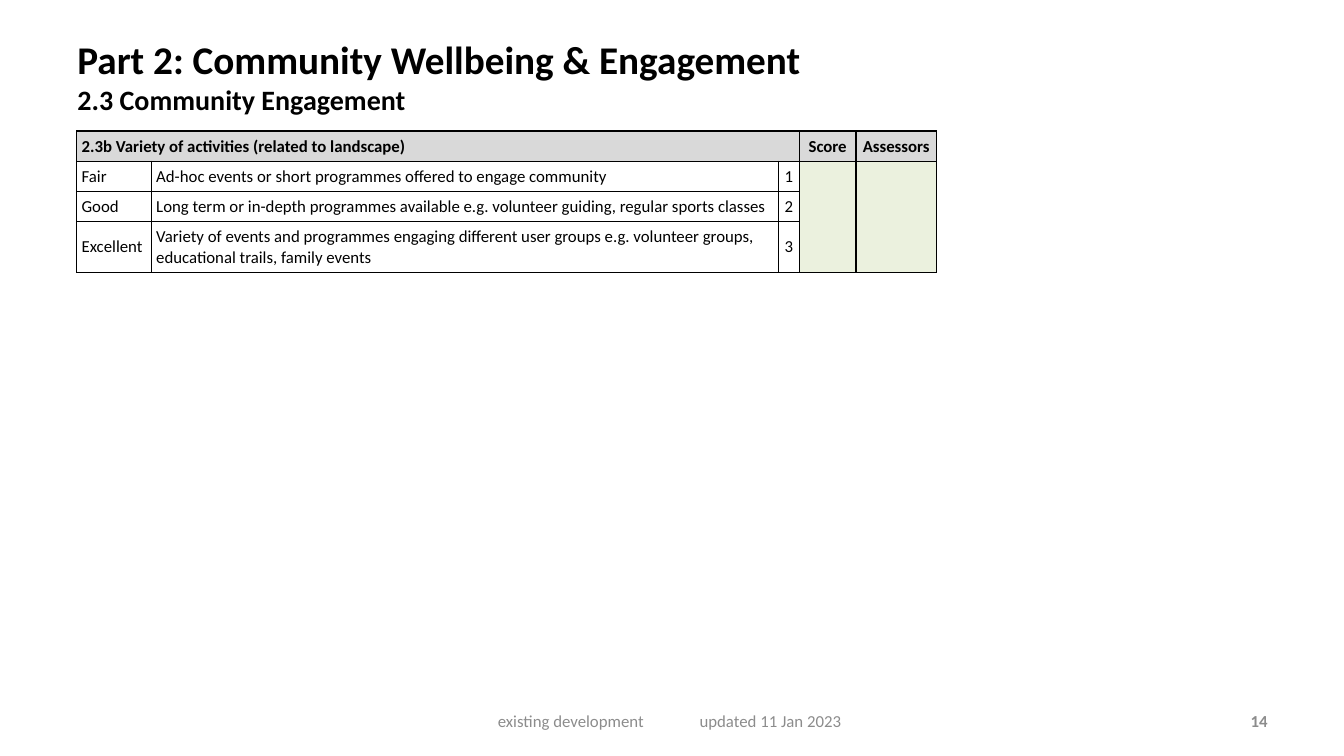
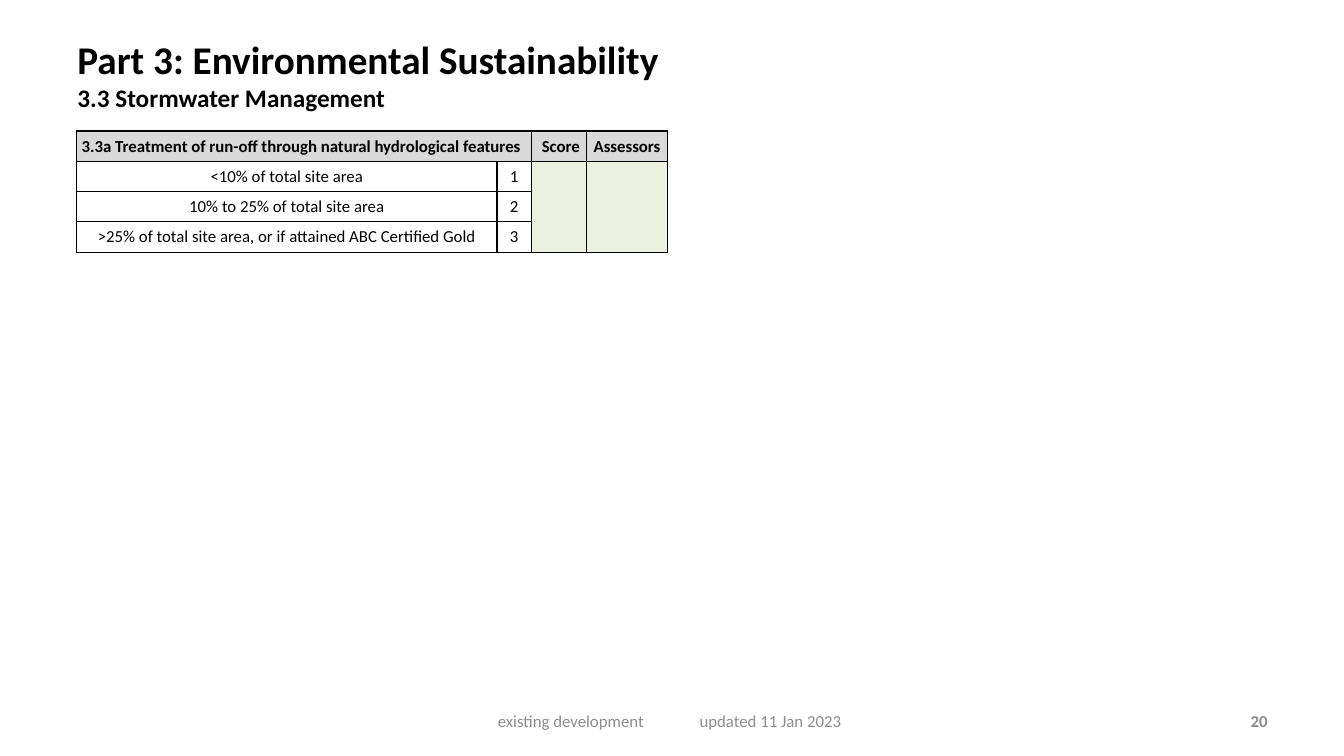
from lxml import etree
from pptx import Presentation
from pptx.dml.color import RGBColor
from pptx.enum.text import MSO_ANCHOR as Anchor, PP_ALIGN as Align
from pptx.oxml.ns import qn
from pptx.util import Inches, Pt

BLACK, GREY, HEAD, SCORE, WHITE = "000000", "8C8C8C", "D9D9D9", "EBF1DE", "FFFFFF"
FOOT_TOP, FOOT_H = 6.95, 0.4
ROW_H, LINE_H = 0.3, 0.2
PAD = dict.fromkeys(
    ("margin_left", "margin_right", "margin_top", "margin_bottom"), Inches(0.05))

SLIDES = [
    {"page": "14", "part": "Part 2: Community Wellbeing & Engagement",
     "topic": "2.3 Community Engagement", "size": 20,
     "heads": ["2.3b Variety of activities (related to landscape)", "Score", "Assessors"],
     "rows": [
         ["Fair", "Ad-hoc events or short programmes offered to engage community", "1"],
         ["Good", "Long term or in-depth programmes available e.g. volunteer guiding, "
                  "regular sports classes", "2"],
         ["Excellent", "Variety of events and programmes engaging different user groups "
                       "e.g. volunteer groups, educational trails, family events", "3"]],
     "cols": [0.74, 6.22, 0.21, 0.56, 0.8], "align": Align.LEFT, "last": 2},
    {"page": "20", "part": "Part 3: Environmental Sustainability",
     "topic": "3.3 Stormwater Management", "size": 18,
     "heads": ["3.3a Treatment of run-off through natural hydrological features",
               " Score", "Assessors"],
     "rows": [
         ["<10% of total site area", "1"],
         ["10% to 25% of total site area", "2"],
         [">25% of total site area, or if attained ABC Certified Gold", "3"]],
     "cols": [4.17, 0.34, 0.55, 0.8], "align": Align.CENTER, "last": 1},
]


def rgb(code):
    return RGBColor.from_string(code)


def assign(item, values):
    for name, value in values.items():
        setattr(item, name, value)


def write(para, text, size=12, color=BLACK, bold=False, align=Align.LEFT):
    para.alignment = align
    run = para.add_run()
    run.text = text
    assign(run.font, {"name": "Calibri", "size": Pt(size), "bold": bold})
    run.font.color.rgb = rgb(color)


def add_box(slide, left, top, width, height, anchor=Anchor.TOP):
    box = slide.shapes.add_textbox(*map(Inches, (left, top, width, height)))
    assign(box.text_frame, {"word_wrap": True, "vertical_anchor": anchor})
    return box.text_frame


def add_title(slide, part, topic, size):
    frame = add_box(slide, 0.67, 0.3, 10.36, 0.99)
    write(frame.paragraphs[0], part, 28, bold=True)
    write(frame.add_paragraph(), topic, size, bold=True)


def add_footer(slide, page):
    frame = add_box(slide, 9.56, FOOT_TOP, 3.11, FOOT_H, Anchor.MIDDLE)
    write(frame.paragraphs[0], page, color=GREY, bold=True, align=Align.RIGHT)
    frame = add_box(slide, 4.84, FOOT_TOP, 3.94, FOOT_H, Anchor.MIDDLE)
    para = frame.paragraphs[0]
    tabs = etree.SubElement(para._p.get_or_add_pPr(), qn("a:tabLst"))
    etree.SubElement(tabs, qn("a:tab"), pos=str(Inches(2)), algn="l")
    write(para, "existing development\tupdated 11 Jan 2023", color=GREY)


def draw_edges(cell):
    """Give all four sides of a cell a thin black line."""
    props = cell._tc.get_or_add_tcPr()
    for index, side in enumerate("LRTB"):
        line = etree.Element(qn("a:ln" + side), w=str(Pt(1)))
        fill = etree.SubElement(line, qn("a:solidFill"))
        etree.SubElement(fill, qn("a:srgbClr"), val=BLACK)
        props.insert(index, line)


def style_cell(cell, fill):
    assign(cell, {**PAD, "vertical_anchor": Anchor.MIDDLE})
    cell.fill.solid()
    cell.fill.fore_color.rgb = rgb(fill)
    draw_edges(cell)


def add_table(slide, left, top, heads, rows, cols, align, last):
    """Place a criteria table with two merged score columns on its right."""
    marks = len(cols) - 2
    heights = [ROW_H] * len(rows) + [ROW_H + (last - 1) * LINE_H]
    table = slide.shapes.add_table(
        len(heights), len(cols),
        *map(Inches, (left, top, sum(cols), sum(heights)))).table
    assign(table, {"first_row": False, "horz_banding": False})
    for col, width in zip(table.columns, cols):
        col.width = Inches(width)
    for row, height in zip(table.rows, heights):
        row.height = Inches(height)

    for r in range(len(heights)):
        for c in range(len(cols)):
            cell = table.cell(r, c)
            style_cell(cell, HEAD if r == 0 else SCORE if c >= marks else WHITE)
            para = cell.text_frame.paragraphs[0]
            if r and c < marks:
                write(para, rows[r - 1][c],
                      align=Align.CENTER if c == marks - 1 else align)
            elif r == 0 and (c == 0 or c >= marks):
                write(para, heads[max(0, c - marks + 1)], bold=True,
                      align=Align.CENTER if c else Align.LEFT)
            else:
                end = etree.SubElement(para._p, qn("a:endParaRPr"))
                end.set("sz", "1200")

    table.cell(0, 0).merge(table.cell(0, marks - 1))
    for c in range(marks, len(cols)):
        table.cell(1, c).merge(table.cell(len(rows), c))


def add_slide(deck, data):
    slide = deck.slides.add_slide(deck.slide_layouts[6])
    add_title(slide, data["part"], data["topic"], data["size"])
    add_table(slide, 0.76, 1.3, data["heads"], data["rows"], data["cols"],
              data["align"], data["last"])
    add_footer(slide, data["page"])


def main():
    deck = Presentation()
    assign(deck, {"slide_width": Inches(13.33), "slide_height": Inches(7.5)})
    for data in SLIDES:
        add_slide(deck, data)
    deck.save("out.pptx")


if __name__ == "__main__":
    main()
